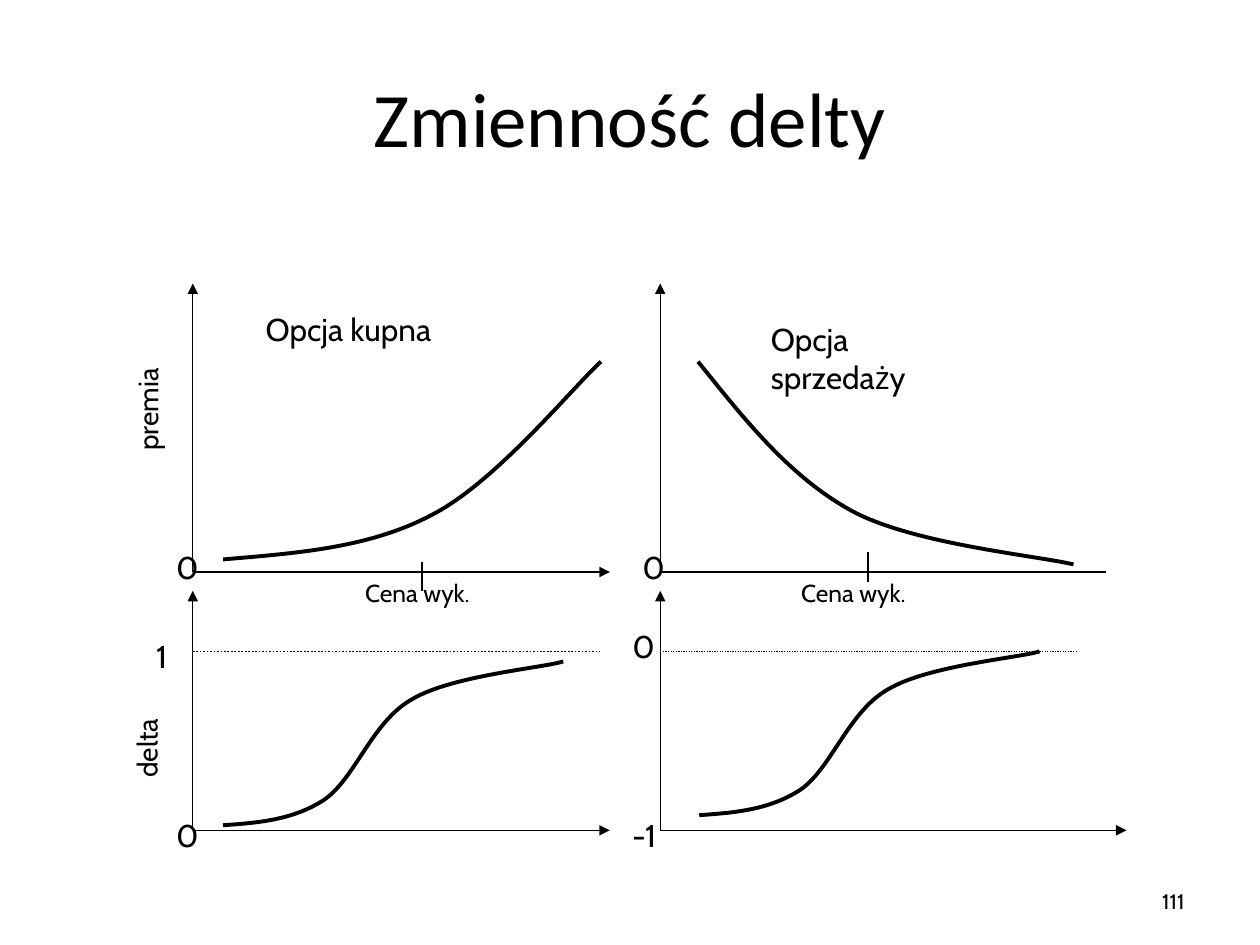
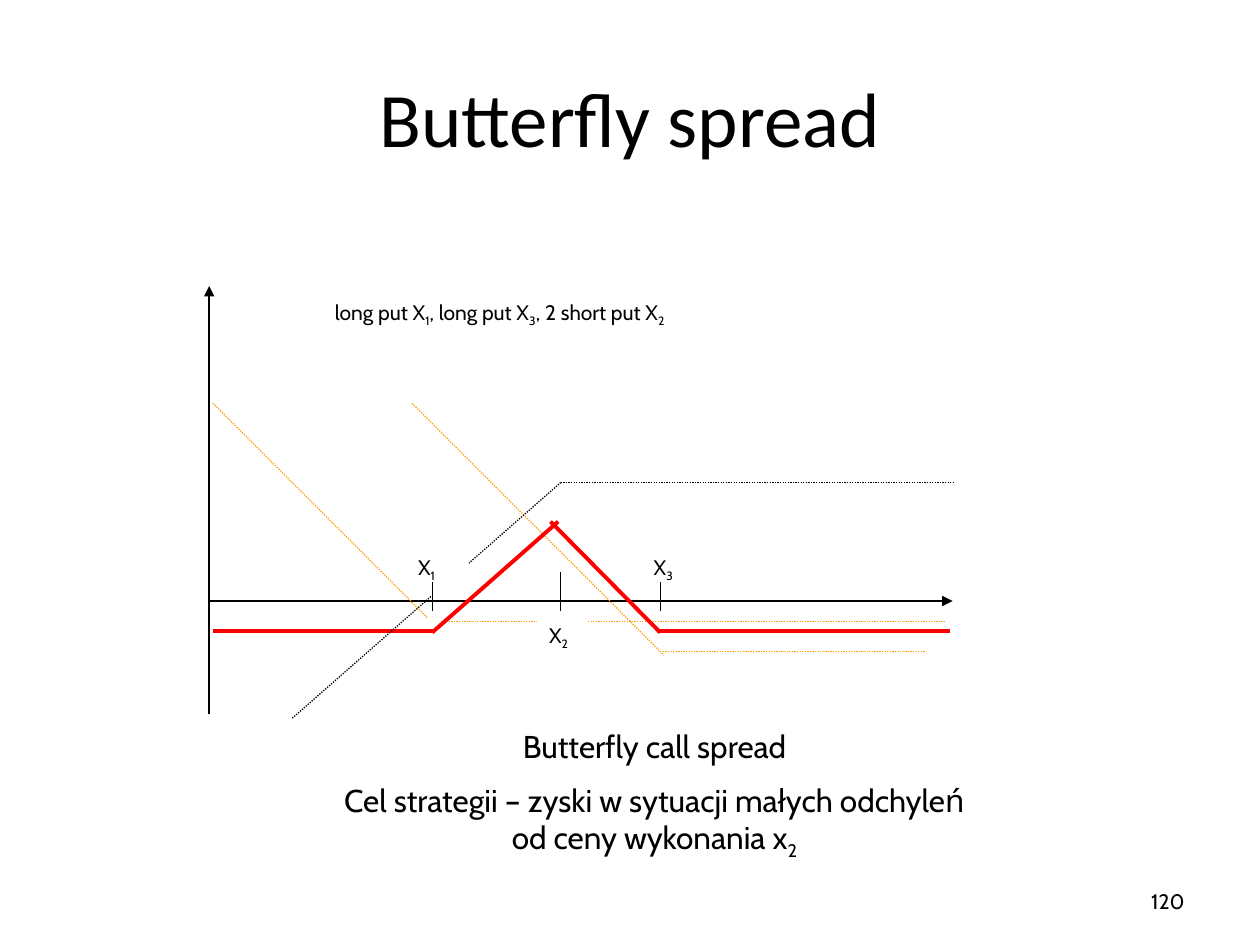
from lxml import etree
from pptx import Presentation
from pptx.dml.color import RGBColor
from pptx.enum.dml import MSO_LINE
from pptx.enum.shapes import MSO_CONNECTOR
from pptx.enum.text import MSO_ANCHOR, PP_ALIGN
from pptx.oxml.ns import qn
from pptx.util import Inches, Pt

STRAIGHT, DOTTED = MSO_CONNECTOR.STRAIGHT, MSO_LINE.ROUND_DOT
MIDDLE, TOP = MSO_ANCHOR.MIDDLE, MSO_ANCHOR.TOP
LEFT, CENTER, RIGHT = PP_ALIGN.LEFT, PP_ALIGN.CENTER, PP_ALIGN.RIGHT

# Shared look
WIDTH, HEIGHT = 10, 7.5
COLORS = {"ink": "000000", "paper": "FFFFFF", "leg": "FF9900", "payoff": "FF0000"}
TITLE_FONT, BODY_FONT = "Calibri", "Cabin"
TITLE_BOX = (0.05 * WIDTH, 0.04 * HEIGHT, 0.9 * WIDTH, 1.25)
NUMBER_BOX = (7.17, 6.95, 2.33, 0.4)
LINES = {  # colour, width, dotted, arrow at the end
    "axis": ("ink", 0.75, False, True),
    "plain": ("ink", 0.75, False, False),
    "dots": ("ink", 0.75, True, False),
    "limit": ("ink", 1, True, False),
    "leg": ("leg", 0.75, True, False),
    "payoff": ("payoff", 2.25, False, False),
}

# Slide 1: four panels, two option types by premium and delta
CALL_X, PUT_X = 1.53, 5.24
PREMIUM_Y, DELTA_Y = 4.54, 6.59
PREMIUM_RISE, DELTA_RISE = 2.29, 1.9
DELTA_LIMIT_Y = 5.17
PANELS = [  # origin, axis height, right end, style of the price axis
    (CALL_X, PREMIUM_Y, PREMIUM_RISE, 4.84, "axis"),
    (PUT_X, PREMIUM_Y, PREMIUM_RISE, 8.78, "plain"),
    (CALL_X, DELTA_Y, DELTA_RISE, 4.84, "axis"),
    (PUT_X, DELTA_Y, DELTA_RISE, 8.94, "axis"),
]
DELTA_CURVE = [(0, 1.3), (0.28, 1.28), (0.55, 1.26), (0.8, 1.1), (1.05, 0.93),
               (1.18, 0.48), (1.5, 0.3), (1.82, 0.11), (2.55, 0.05), (2.7, 0)]
CURVES = [  # left, top, Bézier points
    (0, 0, [(1.77, 4.44), (2.36, 4.39), (2.94, 4.35), (3.44, 4.08),
            (3.94, 3.82), (4.55, 3.07), (4.77, 2.87)]),
    (0, 0, [(5.54, 2.87), (5.91, 3.33), (6.27, 3.79), (6.77, 4.06),
            (7.26, 4.32), (8.23, 4.41), (8.52, 4.48)]),
    (1.77, 5.25, DELTA_CURVE),
    (5.55, 5.17, DELTA_CURVE),
]
DELTA_MARKS = [
    ("plain", 3.35, 4.46, 3.35, 4.69),
    ("plain", 6.89, 4.38, 6.89, 4.62),
    ("limit", CALL_X, DELTA_LIMIT_Y, 4.76, DELTA_LIMIT_Y),
    ("dots", PUT_X, DELTA_LIMIT_Y, 8.54, DELTA_LIMIT_Y),
]
DELTA_LABELS = [  # text, box, size, rotation
    ("Opcja kupna", (2.01, 2.41, 1.81, 0.4), 18, 0),
    ("Opcja sprzedaży", (6.02, 2.49, 1.81, 0.7), 18, 0),
    ("premia", (0.58, 2.9, 1.18, 0.37), 16, 270),
    ("delta", (0.77, 5.69, 0.79, 0.37), 16, 270),
    ("-1", (4.92, 6.43, 0.47, 0.4), 18, 0),
    ("0", (1.3, 6.43, 0.24, 0.4), 18, 0),
    ("0", (4.92, 4.93, 0.24, 0.4), 18, 0),
    ("0", (1.3, 4.3, 0.24, 0.4), 18, 0),
    ("0", (5, 4.3, 0.24, 0.4), 18, 0),
    ("1", (1.14, 5.01, 0.47, 0.4), 18, 0),
    ("Cena wyk.", (2.8, 4.54, 1.26, 0.33), 14, 0),
    ("Cena wyk.", (6.26, 4.54, 1.26, 0.33), 14, 0),
]

# Slide 2: strikes and payoffs; "_" precedes a one-digit subscript
X1, X2, X3 = 3.43, 4.45, 5.24
ZERO_Y, LOSS_Y, PEAK_Y, SHORT_Y = 4.77, 5.01, 4.14, 3.83
BACK_LINES = [
    ("axis", 1.66, 5.67, 1.66, 2.27),
    ("axis", 1.66, ZERO_Y, 7.56, ZERO_Y),
    ("leg", 1.69, 3.2, 3.39, 4.9),
    ("leg", 3.5, 4.93, 7.5, 4.93),
    ("leg", 3.27, 3.2, 5.27, 5.2),
    ("leg", X3, 5.17, 7.34, 5.17),
    ("payoff", 1.69, LOSS_Y, X1 + 0.01, LOSS_Y),
    ("payoff", X3, LOSS_Y, 7.54, LOSS_Y),
]
BACK_LABELS = [
    ("X_2", (4.26, 4.89, 0.4, 0.3)),
    ("long put X_1, long put X_3, 2 short put X_2", (2.56, 2.33, 3.6, 0.4)),
]
FRONT_LINES = [
    ("dots", 2.32, 5.7, X2, SHORT_Y),
    ("dots", X2, SHORT_Y, 7.57, SHORT_Y),
    ("payoff", X1, LOSS_Y + 0.01, 4.43, PEAK_Y),
    ("payoff", 4.37, PEAK_Y, X3, LOSS_Y + 0.01),
]
FRONT_LABELS = [
    ("X_1", (3.22, 4.35, 0.5, 0.38)),
    ("X_3", (5.09, 4.35, 0.5, 0.38)),
]
TICKS = [("plain", x, top, x, 4.85) for x, top in ((X2, 4.54), (X1, 4.62), (X3, 4.62))]
SUMMARY = ["Butterfly call spread",
           "Cel strategii – zyski w sytuacji małych odchyleń od ceny wykonania x_2"]
SUMMARY_BOX = (2.48, 5.72, 5.43, 1.15)


def rgb(name):
    return RGBColor.from_string(COLORS[name])


def set_all(target, values):
    for name, value in values.items():
        setattr(target, name, value)


def place(part, box):
    set_all(part, dict(zip(("left", "top", "width", "height"), map(Inches, box))))


def add_run(paragraph, text, size, font, subscript=False):
    run = paragraph.add_run()
    run.text = text
    set_all(run.font, {"size": Pt(size), "name": font})
    run.font.color.rgb = rgb("ink")
    if subscript:
        run.font._element.set("baseline", "-25000")


def write(frame, paragraphs, size, align=LEFT, anchor=TOP, font=BODY_FONT):
    set_all(frame, {"word_wrap": True, "vertical_anchor": anchor})
    for index, text in enumerate(paragraphs):
        paragraph = frame.add_paragraph() if index else frame.paragraphs[0]
        paragraph.alignment = align
        paragraph.space_before = Pt(size / 2 if index else 0)
        first, *rest = text.split("_")
        add_run(paragraph, first, size, font)
        for part in rest:
            add_run(paragraph, part[0], size, font, subscript=True)
            if part[1:]:
                add_run(paragraph, part[1:], size, font)


def add_label(slide, paragraphs, box, size, rotation=0, filled=False, **format_values):
    label = slide.shapes.add_textbox(*map(Inches, box))
    label.rotation = rotation
    if filled:
        label.fill.solid()
        label.fill.fore_color.rgb = rgb("paper")
    write(label.text_frame, paragraphs, size, **format_values)


def add_line(slide, style, *ends):
    color, width, dotted, arrow = LINES[style]
    connector = slide.shapes.add_connector(STRAIGHT, *map(Inches, ends))
    connector.line.color.rgb = rgb(color)
    connector.line.width = Pt(width)
    if dotted:
        connector.line.dash_style = DOTTED
    if arrow:
        etree.SubElement(connector.line._get_or_add_ln(), qn("a:tailEnd"), type="triangle")
    etree.SubElement(connector._element.spPr, qn("a:effectLst"))


def add_curve(slide, left, top, points):
    start, *others = [(Inches(left + x), Inches(top + y)) for x, y in points]
    builder = slide.shapes.build_freeform(*start)
    builder.add_line_segments(others, close=False)
    curve = builder.convert_to_shape()
    curve.shadow.inherit = False
    curve.fill.background()
    curve.line.color.rgb = rgb("ink")
    curve.line.width = Pt(2.25)
    # Each three straight steps become one cubic segment
    outline = curve._element.spPr.find(".//" + qn("a:path"))
    steps = outline.findall(qn("a:lnTo"))
    for index in range(0, len(steps), 3):
        cubic = etree.SubElement(outline, qn("a:cubicBezTo"))
        for step in steps[index:index + 3]:
            cubic.append(step[0])
            outline.remove(step)


def add_slide(deck, title, number):
    slide = deck.slides.add_slide(deck.slide_layouts[5])
    add_label(slide, [number], NUMBER_BOX, 12, align=RIGHT, anchor=MIDDLE)
    place(slide.shapes.title, TITLE_BOX)
    write(slide.shapes.title.text_frame, [title], 44, CENTER, MIDDLE, TITLE_FONT)
    return slide


def build_delta(deck):
    slide = add_slide(deck, "Zmienność delty", "111")
    for x, y, rise, right, style in PANELS:
        add_line(slide, "axis", x, y, x, y - rise)
        add_line(slide, style, x, y, right, y)
    for curve in CURVES:
        add_curve(slide, *curve)
    for mark in DELTA_MARKS:
        add_line(slide, *mark)
    for text, box, size, rotation in DELTA_LABELS:
        add_label(slide, [text], box, size, rotation)


def build_butterfly(deck):
    slide = add_slide(deck, "Butterfly spread", "120")
    for lines, labels in ((BACK_LINES, BACK_LABELS), (FRONT_LINES, FRONT_LABELS), (TICKS, [])):
        for line in lines:
            add_line(slide, *line)
        for text, box in labels:
            add_label(slide, [text], box, 12, filled=True)
    add_label(slide, SUMMARY, SUMMARY_BOX, 18, align=CENTER)


def main():
    deck = Presentation()
    set_all(deck, {"slide_width": Inches(WIDTH), "slide_height": Inches(HEIGHT)})
    build_delta(deck)
    build_butterfly(deck)
    deck.save("out.pptx")


if __name__ == "__main__":
    main()
